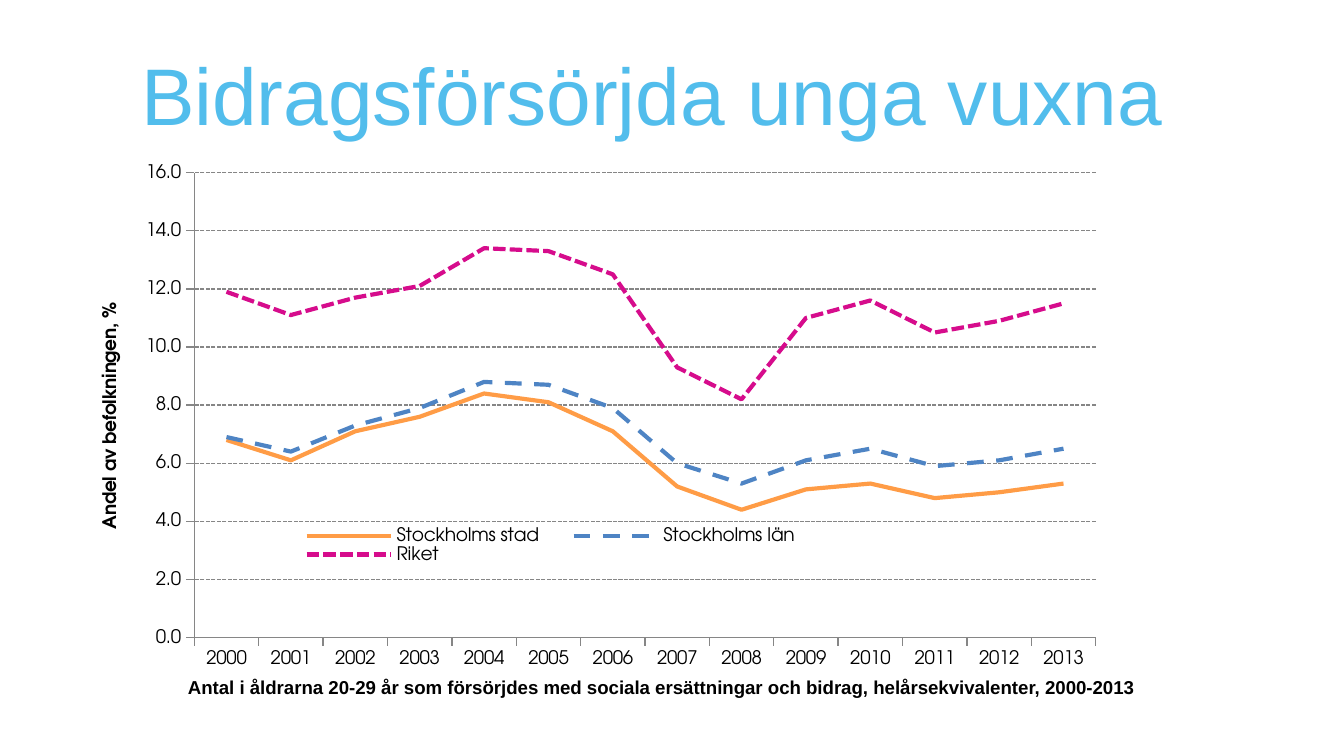
from lxml import etree
from pptx import Presentation
from pptx.chart.data import CategoryChartData
from pptx.dml.color import RGBColor
from pptx.enum.chart import XL_CHART_TYPE, XL_LEGEND_POSITION, XL_TICK_MARK
from pptx.enum.dml import MSO_LINE
from pptx.enum.text import MSO_ANCHOR, PP_ALIGN
from pptx.oxml.ns import qn
from pptx.util import Pt

LINE_CHART = XL_CHART_TYPE.LINE
BOTTOM = XL_LEGEND_POSITION.BOTTOM
OUTSIDE, NO_TICK = XL_TICK_MARK.OUTSIDE, XL_TICK_MARK.NONE
SOLID, DASH, SHORT_DASH = MSO_LINE.SOLID, MSO_LINE.DASH, MSO_LINE.SQUARE_DOT
MIDDLE, CENTER = MSO_ANCHOR.MIDDLE, PP_ALIGN.CENTER
TITLE_ONLY = 5

YEARS = [str(year) for year in range(2000, 2014)]
SERIES = [
    ("Stockholms stad", "FF9C46", SOLID,
     [6.8, 6.1, 7.1, 7.6, 8.4, 8.1, 7.1, 5.2, 4.4, 5.1, 5.3, 4.8, 5, 5.3]),
    ("Stockholms län", "4E84C4", DASH,
     [6.9, 6.4, 7.3, 7.9, 8.8, 8.7, 7.9, 6, 5.3, 6.1, 6.5, 5.9, 6.1, 6.5]),
    ("Riket", "D60C8C", SHORT_DASH,
     [11.9, 11.1, 11.7, 12.1, 13.4, 13.3, 12.5, 9.3, 8.2, 11, 11.6, 10.5, 10.9, 11.5]),
]


def color(hex_string):
    return RGBColor.from_string(hex_string)


def place(parent, index, fractions, inner=False):
    """Give a chart part a fixed place, in fractions of the chart."""
    for old in parent.findall(qn("c:layout")):
        parent.remove(old)
    layout = etree.Element(qn("c:layout"))
    manual = etree.SubElement(layout, qn("c:manualLayout"))
    settings = [("layoutTarget", "inner")] if inner else []
    settings += [("xMode", "edge"), ("yMode", "edge")]
    settings += zip("xywh", fractions)
    for tag, value in settings:
        etree.SubElement(manual, qn("c:" + tag)).set("val", str(value))
    parent.insert(index, layout)


class SlideBuilder:
    text_font, chart_font = "Arial", "TeX Gyre Adventor"
    title_color, text_color, axis_color = "52BDEC", "000000", "868686"

    def __init__(self, page):
        self.page = page

    def set_font(self, font, name, size, hex_string, bold=False):
        font.name, font.size, font.bold = name, Pt(size), bold
        font.color.rgb = color(hex_string)

    def set_line(self, line, hex_string, width, dash=SOLID):
        line.color.rgb = color(hex_string)
        line.width, line.dash_style = Pt(width), dash

    def title(self, text, left, top, width, height):
        box = self.page.shapes.title
        box.left, box.top, box.width, box.height = map(Pt, (left, top, width, height))
        box.text_frame.text = text
        box.text_frame.vertical_anchor = MIDDLE
        para = box.text_frame.paragraphs[0]
        para.alignment = CENTER
        self.set_font(para.font, self.text_font, 43, self.title_color)

    def caption(self, text, left, top, width, height):
        box = self.page.shapes.add_textbox(*map(Pt, (left, top, width, height)))
        box.text_frame.word_wrap = True
        para = box.text_frame.paragraphs[0]
        para.text = text
        self.set_font(para.font, self.text_font, 10, self.text_color, bold=True)

    def line_chart(self, axis_title, left, top, width, height):
        data = CategoryChartData(number_format="#,##0.0")
        data.categories = YEARS
        for name, _, _, values in SERIES:
            data.add_series(name, values)
        chart = self.page.shapes.add_chart(
            LINE_CHART, *map(Pt, (left, top, width, height)), data).chart
        chart.has_title = False
        self.set_font(chart.font, self.chart_font, 10, self.text_color)

        # Lines
        chart.plots[0].vary_by_categories = False
        for series, (_, hex_string, dash, _) in zip(chart.plots[0].series, SERIES):
            series.smooth = False
            self.set_line(series.format.line, hex_string, 2.25, dash)

        # Axes
        for axis in (chart.category_axis, chart.value_axis):
            axis.major_tick_mark, axis.minor_tick_mark = OUTSIDE, NO_TICK
            self.set_line(axis.format.line, self.axis_color, 0.75)
        axis = chart.value_axis
        axis.minimum_scale, axis.maximum_scale, axis.major_unit = 0, 16, 2
        axis.tick_labels.number_format = "#,##0.0"
        axis.tick_labels.number_format_is_linked = False
        self.set_line(axis.major_gridlines.format.line, self.axis_color, 0.75, SHORT_DASH)
        para = axis.axis_title.text_frame.paragraphs[0]
        para.text = axis_title
        self.set_font(para.font, self.chart_font, 10, self.text_color, bold=True)

        # Legend inside the plot area
        chart.has_legend = True
        chart.legend.position = BOTTOM
        chart.legend.include_in_layout = False
        self.set_font(chart.legend.font, self.chart_font, 10, self.text_color)
        plot_area = chart.element.find(".//" + qn("c:plotArea"))
        legend = chart.element.find(".//" + qn("c:legend"))
        place(plot_area, 0, (0.12, 0.03, 0.86, 0.83), inner=True)
        place(legend, 1, (0.2, 0.66, 0.52, 0.07))


def main():
    deck = Presentation()
    deck.slide_width, deck.slide_height = Pt(720), Pt(405)
    page = deck.slides.add_slide(deck.slide_layouts[TITLE_ONLY])
    builder = SlideBuilder(page)
    builder.title("Bidragsförsörjda unga vuxna", 25, 16, 648, 68)
    builder.caption("Antal i åldrarna 20-29 år som försörjdes med sociala ersättningar "
                    "och bidrag, helårsekvivalenter, 2000-2013", 93.6, 358.6, 544, 19.4)
    builder.line_chart("Andel av befolkningen, %", 36.7, 83.5, 561.6, 300.2)
    deck.save("out.pptx")


if __name__ == "__main__":
    main()
